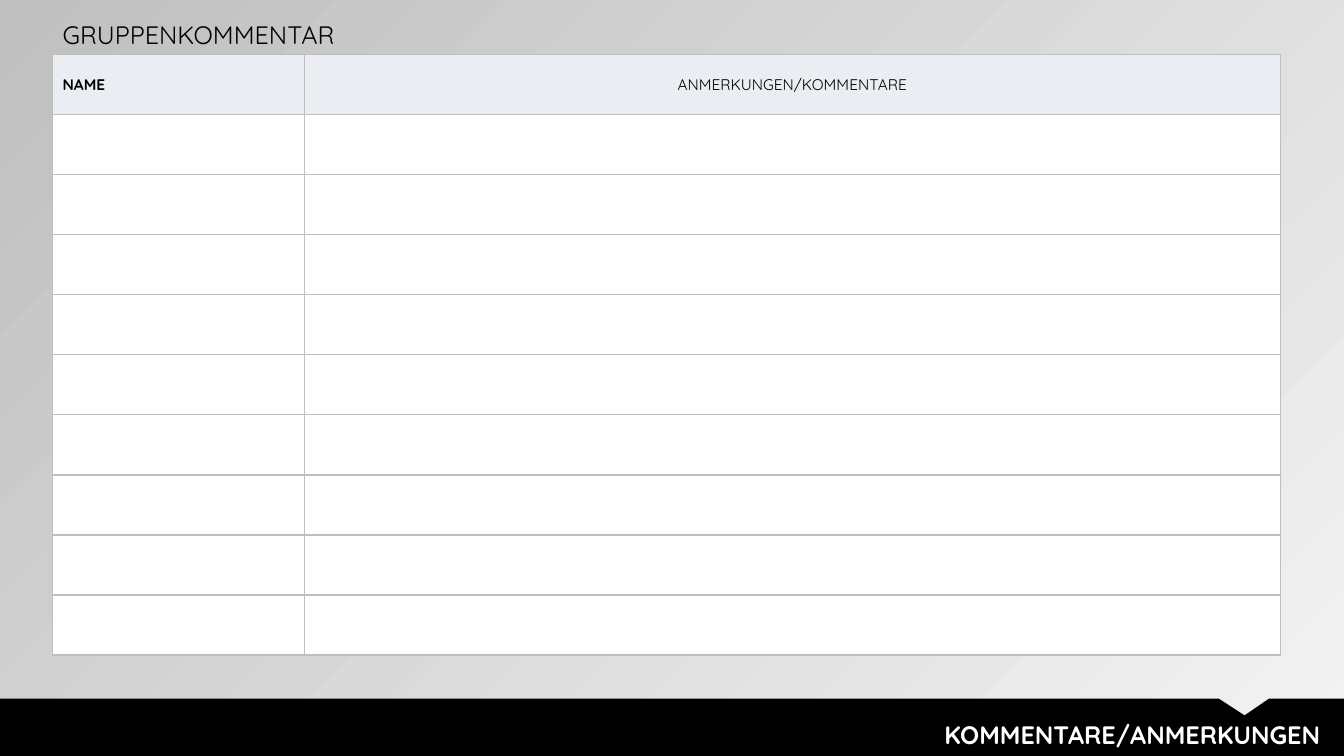
from lxml import etree
from pptx import Presentation
from pptx import util as u
from pptx.dml.color import RGBColor
from pptx.enum import text
from pptx.oxml import ns

BLACK = RGBColor(0x00, 0x00, 0x00)
WHITE = RGBColor(0xFF, 0xFF, 0xFF)
HEADER_FILL = RGBColor(0xEA, 0xEE, 0xF3)
GREY = RGBColor(0xBF, 0xBF, 0xBF)
LIGHT_GREY = RGBColor(0xF2, 0xF2, 0xF2)

WIDTH, HEIGHT = 960, 540
TITLE_ONLY = 5
ALIGN = text.PP_ALIGN
MIDDLE = text.MSO_ANCHOR.MIDDLE


class SlideBuilder:
    font_name = "Quicksand"

    def __init__(self, presentation):
        self.slide = presentation.slides.add_slide(presentation.slide_layouts[TITLE_ONLY])

    def background(self, colors, angle):
        fill = self.slide.background.fill
        fill.gradient()
        fill.gradient_angle = angle
        for stop, color in zip(fill.gradient_stops, colors):
            stop.color.rgb = color

    def add_words(self, paragraph, words, color, align=ALIGN.LEFT, **formats):
        paragraph.alignment = align
        run = paragraph.add_run()
        run.text = words
        run.font.color.rgb = color
        for name, value in {"name": self.font_name, **formats}.items():
            setattr(run.font, name, value)

    def place(self, shape, box, words, color, **formats):
        for name, value in zip(("left", "top", "width", "height"), box):
            setattr(shape, name, u.Pt(value))
        frame_formats = {
            "word_wrap": True,
            "auto_size": text.MSO_AUTO_SIZE.NONE,
            "vertical_anchor": MIDDLE,
        }
        for name, value in frame_formats.items():
            setattr(shape.text_frame, name, value)
        self.add_words(shape.text_frame.paragraphs[0], words, color, **formats)

    def title(self, box, words, color, **formats):
        self.place(self.slide.shapes.title, box, words, color, **formats)

    def label(self, box, words, color, **formats):
        shape = self.slide.shapes.add_textbox(0, 0, 0, 0)
        self.place(shape, box, words, color, **formats)

    def outline(self, points, color):
        start, *others = [(u.Pt(x), u.Pt(y)) for x, y in points]
        freeform = self.slide.shapes.build_freeform(*start)
        freeform.add_line_segments(others, close=True)
        shape = freeform.convert_to_shape()
        shape.shadow.inherit = False
        shape.fill.solid()
        shape.fill.fore_color.rgb = color
        shape.line.fill.background()

    def cell_borders(self, cell, color, width):
        properties = cell._tc.get_or_add_tcPr()
        for side in ("L", "R", "T", "B"):
            line = etree.SubElement(properties, ns.qn(f"a:ln{side}"), w=str(u.Pt(width)))
            fill = etree.SubElement(line, ns.qn("a:solidFill"))
            etree.SubElement(fill, ns.qn("a:srgbClr"), val=str(color))

    def table(self, left, top, column_widths, row_height, row_count, headers):
        box = (left, top, sum(column_widths), row_height * row_count)
        frame = self.slide.shapes.add_table(
            row_count, len(column_widths), *(u.Pt(value) for value in box))
        table = frame.table
        table.first_row = table.horz_banding = False
        for column, width in zip(table.columns, column_widths):
            column.width = u.Pt(width)
        for index, row in enumerate(table.rows):
            row.height = u.Pt(row_height)
            for cell in row.cells:
                self.cell_borders(cell, GREY, 1)
                cell.fill.solid()
                cell.fill.fore_color.rgb = WHITE if index else HEADER_FILL
                cell.vertical_anchor = MIDDLE
                cell.margin_top = cell.margin_bottom = 0
        for cell, (words, formats) in zip(table.rows[0].cells, headers):
            self.add_words(cell.text_frame.paragraphs[0], words, BLACK, size=u.Pt(11), **formats)


def main():
    presentation = Presentation()
    presentation.slide_width, presentation.slide_height = u.Pt(WIDTH), u.Pt(HEIGHT)
    builder = SlideBuilder(presentation)
    builder.background((LIGHT_GREY, GREY), 135)
    builder.title((37.5, 10, 320, 29), "GRUPPENKOMMENTAR", BLACK, size=u.Pt(18), bold=False)
    builder.table(37.5, 39, (180, 697), 42.9, 10, [
        ("NAME", {"bold": True}),
        ("ANMERKUNGEN/KOMMENTARE", {"bold": False, "align": ALIGN.CENTER}),
    ])
    bar_top = 499
    builder.outline([
        (0, bar_top), (870.5, bar_top), (889, 511), (906.5, bar_top),
        (WIDTH, bar_top), (WIDTH, HEIGHT), (0, HEIGHT),
    ], BLACK)
    builder.label((298, 510, 652, 29), "KOMMENTARE/ANMERKUNGEN", WHITE,
                  size=u.Pt(18), bold=True, align=ALIGN.RIGHT)
    presentation.save("out.pptx")


if __name__ == "__main__":
    main()
